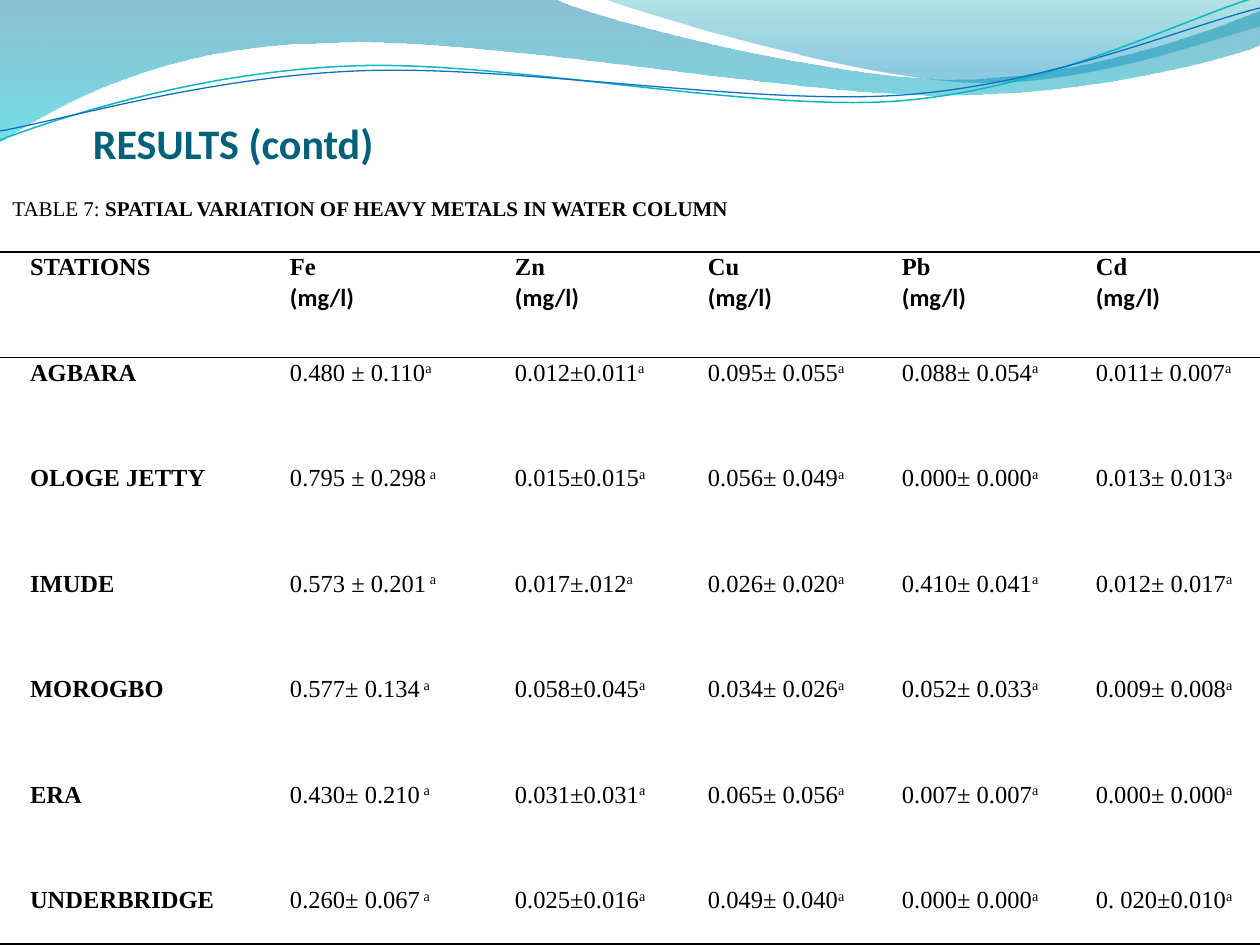
import pptx
import pptx.util
import pptx.dml.color
import pptx.enum.text
from lxml import etree
from pptx.oxml.ns import qn

# Content
TITLE = "RESULTS (contd)"
CAPTION = [("TABLE 7: ", False),
           ("SPATIAL VARIATION OF HEAVY METALS IN WATER COLUMN", True)]
METALS = ["Fe", "Zn", "Cu", "Pb", "Cd"]
UNIT = "(mg/l)"
# Each value is followed by a raised group letter
STATIONS = [
    ("AGBARA", "0.480 ± 0.110|a", "0.012±0.011|a", "0.095± 0.055|a", "0.088± 0.054|a", "0.011± 0.007|a"),
    ("OLOGE JETTY", "0.795 ± 0.298| a", "0.015±0.015|a", "0.056± 0.049|a", "0.000± 0.000|a", "0.013± 0.013|a"),
    ("IMUDE", "0.573 ± 0.201| a", "0.017±.012|a", "0.026± 0.020|a", "0.410± 0.041|a", "0.012± 0.017|a"),
    ("MOROGBO", "0.577± 0.134| a", "0.058±0.045|a", "0.034± 0.026|a", "0.052± 0.033|a", "0.009± 0.008|a"),
    ("ERA", "0.430± 0.210| a", "0.031±0.031|a", "0.065± 0.056|a", "0.007± 0.007|a", "0.000± 0.000|a"),
    ("UNDERBRIDGE", "0.260± 0.067| a", "0.025±0.016|a", "0.049± 0.040|a", "0.000± 0.000|a", "0. 020±0.010|a"),
]

# Format
COLORS = {"text": "000000", "title": "04617B", "teal": "0AB8BF", "blue": "0F6FC6",
          "deep": "0074A1", "cyan": "00C6CF", "sea": "00A1A9", "sky": "008BBF"}
SERIF, SANS = "Times New Roman", "Calibri"
COL_W = [260, 225, 193, 194, 194, 194]
BODY_H, LAST_H = 633, 59  # six equal rows, then the last one
PLAIN_TABLE = "{2D5ABB26-0587-4C30-8999-92F81FD0307C}"

# Waves: each segment is one point (line) or three points (Bezier curve)
BANDS = [
    {"path": [(0, 0), [(554, -1)], [(600, 21), (837, 79), (955, 79)],
              [(1075, 79), (1207, 33), (1260, 11)], [(1261, 45)],
              [(1239, 55), (1096, 96), (940, 95)], [(784, 95), (481, 35), (324, 43)],
              [(163, 45), (58, 105), (-1, 142)]],
     "stops": [(0, "deep", 45), (1, "cyan", 55)]},
    {"path": [(604, -1), [(641, 14), (859, 78), (969, 82)],
              [(1079, 87), (1211, 40), (1260, 26)], [(1260, 0)]],
     "stops": [(0, "sea", 30), (0.8, "sky", 45)]},
]
STRANDS = [
    {"path": [(0, 140), [(60, 117), (199, 72), (349, 66)],
              [(498, 59), (747, 112), (898, 101)], [(1050, 89), (1182, 19), (1257, -3)]],
     "color": "teal", "width": 0.85},
    {"path": [(0, 131), [(59, 121), (207, 77), (357, 71)],
              [(508, 64), (752, 106), (903, 95)], [(1053, 84), (1186, 26), (1260, 8)]],
     "color": "blue", "width": 0.75},
]


def px(n):
    return pptx.util.Emu(round(n * 914400 / 126))


def rgb(name):
    return pptx.dml.color.RGBColor.from_string(COLORS[name])


def add_wave(s, path, close):
    start, *segments = path
    fb = s.shapes.build_freeform(*start, scale=px(1))
    fb.add_line_segments([pt for seg in segments for pt in seg], close=close)
    sp = fb.convert_to_shape()
    sp.shadow.inherit = False
    # Join the three points of each curve into one Bezier segment
    lines = iter(list(sp._element.iter(qn("a:lnTo"))))
    for seg in segments:
        group = [next(lines) for _ in seg]
        if len(group) == 3:
            curve = etree.Element(qn("a:cubicBezTo"))
            group[0].addprevious(curve)
            for line in group:
                curve.append(line[0])
                line.getparent().remove(line)
    return sp


def add_run(p, text, size, font=SERIF, color="text", bold=False, raised=False):
    r = p.add_run()
    r.text = text
    fmt = {"size": pptx.util.Pt(size), "name": font, "bold": bold}
    for key, value in fmt.items():
        setattr(r.font, key, value)
    r.font.color.rgb = rgb(color)
    if raised:
        r._r.get_or_add_rPr().set("baseline", "30000")


def indent(p, n):
    p._p.get_or_add_pPr().set("marL", str(px(n)))


def add_borders(cell, ruled):
    for side in "LRTB":
        ln = etree.SubElement(cell._tc.get_or_add_tcPr(), qn("a:ln" + side),
                              w=str(pptx.util.Pt(1)))
        if side in ruled:
            fill = etree.SubElement(ln, qn("a:solidFill"))
            etree.SubElement(fill, qn("a:srgbClr"), val=COLORS["text"])
        else:
            etree.SubElement(ln, qn("a:noFill"))


def add_text_box(s, x, y, w, h, **fmt):
    tf = s.shapes.add_textbox(px(x), px(y), px(w), px(h)).text_frame
    for key, value in fmt.items():
        setattr(tf, key, value)
    return tf


def main():
    prs = pptx.Presentation()
    prs.slide_width, prs.slide_height = px(1260), px(945)
    s = prs.slides.add_slide(prs.slide_layouts[6])

    # Header waves
    for band in BANDS:
        sp = add_wave(s, band["path"], True)
        sp.line.fill.background()
        sp.fill.gradient()
        sp.fill.gradient_angle = 270
        for stop, (pos, color, alpha) in zip(sp.fill.gradient_stops, band["stops"]):
            stop.position = pos
            stop.color.rgb = rgb(color)
        for clr, (pos, color, alpha) in zip(sp._element.spPr.iter(qn("a:srgbClr")), band["stops"]):
            etree.SubElement(clr, qn("a:alpha"), val=str(alpha * 1000))
    for strand in STRANDS:
        sp = add_wave(s, strand["path"], False)
        sp.fill.background()
        sp.line.color.rgb = rgb(strand["color"])
        sp.line.width = pptx.util.Pt(strand["width"])

    # Table: every cell is a list of paragraphs, each a list of runs
    head = [[[("STATIONS", {"bold": True})]]]
    head += [[[(m, {"bold": True})], [(UNIT, {"bold": True, "font": SANS})]] for m in METALS]
    rows = [head]
    for name, *values in STATIONS:
        pairs = [v.split("|") for v in values]
        rows.append([[[(name, {"bold": True})]]]
                    + [[[(v, {}), (group, {"raised": True})]] for v, group in pairs])
    table = s.shapes.add_table(len(rows), len(COL_W), 0, px(252),
                               px(sum(COL_W)), px(BODY_H + LAST_H)).table
    table.first_row = table.horz_banding = False
    table._tbl.tblPr.find(qn("a:tableStyleId")).text = PLAIN_TABLE
    for col, w in zip(table.columns, COL_W):
        col.width = px(w)
    for row, h in zip(table.rows, [BODY_H / 6] * 6 + [LAST_H]):
        row.height = px(h)
    margins = {"margin_left": px(7), "margin_right": px(7), "margin_top": 0, "margin_bottom": 0}
    ruled = {0: "TB", 1: "T", len(rows) - 1: "B"}
    for i, row in enumerate(rows):
        for j, paragraphs in enumerate(row):
            cell = table.cell(i, j)
            for key, value in margins.items():
                setattr(cell, key, value)
            add_borders(cell, ruled.get(i, ""))
            cell.fill.background()
            tf = cell.text_frame
            for k, runs in enumerate(paragraphs):
                p = tf.add_paragraph() if k else tf.paragraphs[0]
                p.line_spacing = 1.07
                indent(p, 23)
                for text, fmt in runs:
                    add_run(p, text, 14, **fmt)

    # Caption
    tf = add_text_box(s, 0, 189, 747, 38, word_wrap=False,
                      vertical_anchor=pptx.enum.text.MSO_ANCHOR.MIDDLE,
                      auto_size=pptx.enum.text.MSO_AUTO_SIZE.SHAPE_TO_FIT_TEXT)
    for text, bold in CAPTION:
        add_run(tf.paragraphs[0], text, 12, bold=bold)

    # Title
    tf = add_text_box(s, 35, 52, 1225, 116, word_wrap=True, margin_left=0, margin_right=0,
                      margin_bottom=0, vertical_anchor=pptx.enum.text.MSO_ANCHOR.BOTTOM)
    indent(tf.paragraphs[0], 58)
    add_run(tf.paragraphs[0], TITLE, 24, SANS, "title", True)

    prs.save("out.pptx")


if __name__ == "__main__":
    main()
